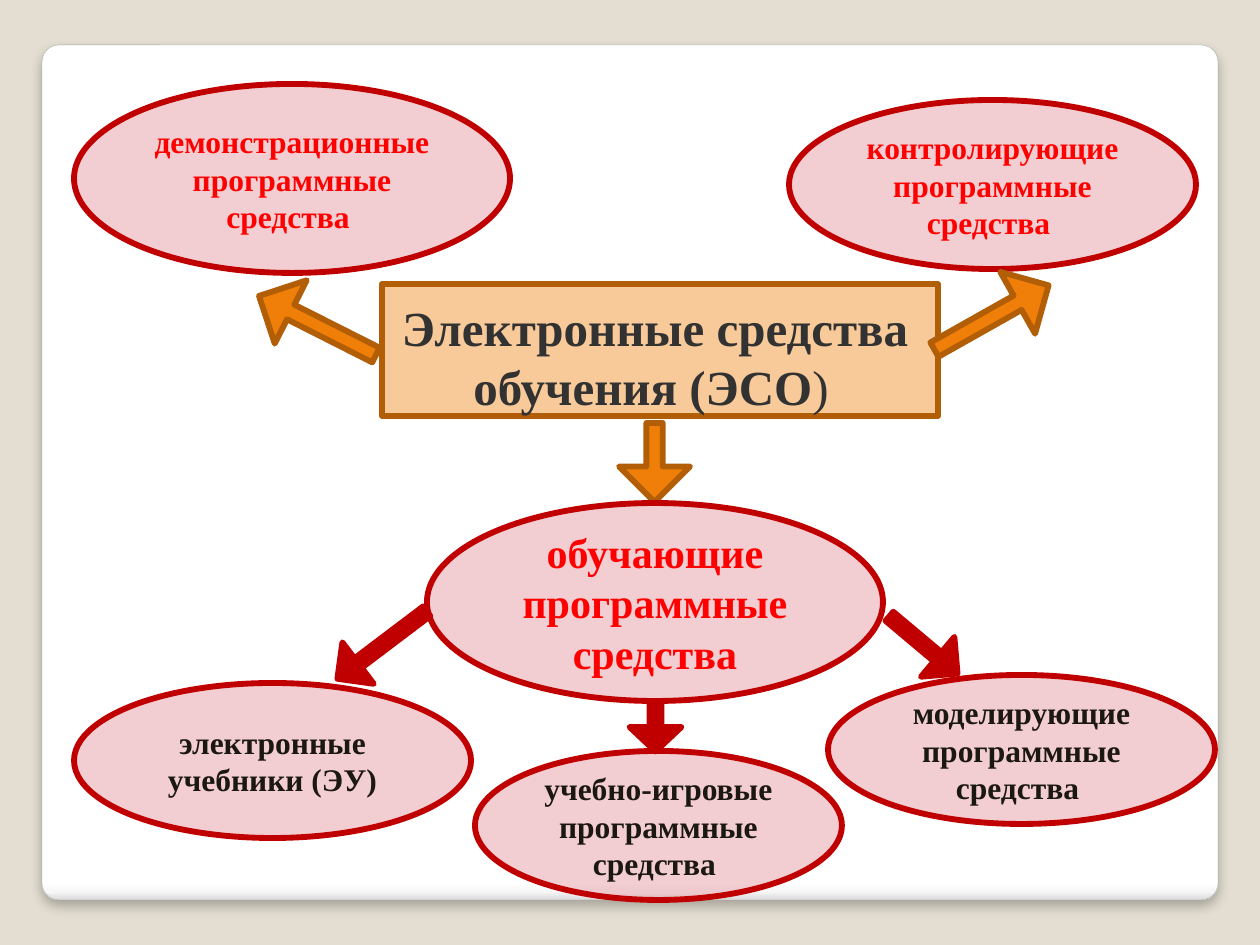
from dataclasses import dataclass

from lxml.etree import SubElement
from pptx import Presentation
from pptx.dml.color import RGBColor
from pptx.enum.shapes import MSO_SHAPE as Shape
from pptx.enum.text import MSO_ANCHOR as Anchor, PP_ALIGN as Align
from pptx.oxml import parse_xml
from pptx.oxml.ns import nsdecls, qn
from pptx.util import Emu, Pt

PX_PER_INCH = 126


@dataclass(frozen=True)
class Theme:
    font: str = "Times New Roman"
    backdrop: str = "E3DED1"
    panel_edge: str = "A4A4A4"
    orange: str = "F07F09"
    orange_edge: str = "B25E07"
    pink: str = "E69CA4"
    red: str = "C00000"
    accent_text: str = "FF0000"
    title_text: str = "323232"
    leaf_text: str = "1B1810"
    title_size: int = 28
    hub_size: int = 24
    body_size: int = 18
    outline: float = 3.35


THEME = Theme()


def px(length):
    return Emu(round(length * 914400 / PX_PER_INCH))


def within(box, left, top, width, height):
    """Shift a part's frame from its region's corner to the slide."""
    return box[0] + left, box[1] + top, width, height


def add_part(slide, preset, frame, fill, edge, opacity=100):
    part = slide.shapes.add_shape(preset, *map(px, frame))
    part.shadow.inherit = False
    part.fill.solid()
    part.fill.fore_color.rgb = RGBColor.from_string(fill)
    part.line.color.rgb = RGBColor.from_string(edge)
    part.line.width = Pt(THEME.outline)
    if opacity < 100:
        color = part.fill._xPr.find(qn("a:solidFill"))[0]
        SubElement(color, qn("a:alpha")).set("val", str(opacity * 1000))
    return part


def style_run(run, size, color, bold=True):
    run.font.name = THEME.font
    run.font.size = Pt(size)
    run.font.bold = bold
    run.font.color.rgb = RGBColor.from_string(color)


def add_ellipse(slide, frame, wording, color, size=THEME.body_size):
    ellipse = add_part(slide, Shape.OVAL, frame, THEME.pink, THEME.red, 50)
    body = ellipse.text_frame
    body.text = wording
    body.word_wrap = True
    body.vertical_anchor = Anchor.MIDDLE
    body.paragraphs[0].alignment = Align.CENTER
    style_run(body.paragraphs[0].runs[0], size, color)


def add_arrow(slide, frame, angle, fill, edge):
    arrow = add_part(slide, Shape.RIGHT_ARROW, frame, fill, edge)
    arrow.adjustments[0] = 0.23
    arrow.adjustments[1] = 0.5
    arrow.rotation = angle


def add_panel(slide, box):
    panel = add_part(slide, Shape.ROUNDED_RECTANGLE, box, "FFFFFF", THEME.panel_edge)
    panel.adjustments[0] = 0.02
    panel.line.width = Pt(0.16)
    properties = panel.fill._xPr
    stops = "".join(
        f'<a:gs pos="{percent * 1000}"><a:srgbClr val="{color}"/></a:gs>'
        for percent, color in [(0, "FFFFFF"), (98, "FFFFFF"), (99, "F7F7F7"), (100, "DADADA")]
    )
    gradient = parse_xml(
        f'<a:gradFill {nsdecls("a")} rotWithShape="1"><a:gsLst>{stops}</a:gsLst>'
        '<a:lin ang="5400000" scaled="0"/></a:gradFill>'
    )
    properties.replace(properties.find(qn("a:solidFill")), gradient)
    shadow = parse_xml(
        f'<a:outerShdw {nsdecls("a")} blurRad="{Pt(6)}" dist="{Pt(4)}" dir="5400000" '
        'algn="t" rotWithShape="0"><a:srgbClr val="000000">'
        '<a:alpha val="25000"/></a:srgbClr></a:outerShdw>'
    )
    properties.find(qn("a:effectLst")).append(shadow)


def add_title(slide, box):
    add_part(slide, Shape.RECTANGLE, box, THEME.orange, THEME.orange_edge, 41)
    frame = within(box, -15, 7, 576, 131)
    body = slide.shapes.add_textbox(*map(px, frame)).text_frame
    body.word_wrap = True
    heading = body.paragraphs[0]
    heading.alignment = Align.CENTER
    for wording, size, bold in [
        ("Электронные средства обучения (ЭСО", THEME.title_size, True),
        (")", THEME.title_size, False),
        (" ", THEME.body_size, False),
    ]:
        run = heading.add_run()
        run.text = wording
        style_run(run, size, THEME.title_text, bold)


def add_overview(slide, box):
    """The title with the two upper kinds of tools and the arrows leaving it."""
    add_title(slide, within(box, 308, 200, 556, 132))
    for frame, wording in [
        ((715, 16, 407, 169), "контролирующие программные средства "),
        ((0, 0, 436, 189), "демонстрационные программные средства "),
    ]:
        add_ellipse(slide, within(box, *frame), wording, THEME.accent_text)
    for frame, angle in [
        ((178, 206, 131, 71), 206.8),
        ((852, 198, 131, 71), 330.6),
        ((541, 343, 79, 71), 90),
    ]:
        add_arrow(slide, within(box, *frame), angle, THEME.orange, THEME.orange_edge)


def add_teaching_tools(slide, box):
    """The teaching hub, its three branches and the arrows to them."""
    for frame, wording in [
        ((0, 181, 397, 155), "электронные учебники (ЭУ)"),
        ((401, 249, 367, 149), "учебно-игровые программные средства "),
        ((754, 173, 387, 149), "моделирующие программные средства "),
    ]:
        add_ellipse(slide, within(box, *frame), wording, THEME.leaf_text)
    add_ellipse(slide, within(box, 353, 1, 456, 198), "обучающие программные средства",
                THEME.accent_text, THEME.hub_size)
    for frame, angle in [
        ((252, 117, 112, 52), 142.9),
        ((805, 117, 89, 52), 40),
        ((557, 199, 49, 52), 90),
    ]:
        add_arrow(slide, within(box, *frame), angle, THEME.red, THEME.red)


def main():
    deck = Presentation()
    deck.slide_width, deck.slide_height = px(1260), px(945)
    slide = deck.slides.add_slide(deck.slide_layouts[6])
    slide.background.fill.solid()
    slide.background.fill.fore_color.rgb = RGBColor.from_string(THEME.backdrop)
    add_panel(slide, (42, 45, 1176, 855))
    add_overview(slide, (74, 84, 1122, 414))
    add_teaching_tools(slide, (74, 502, 1141, 398))
    deck.save("out.pptx")


if __name__ == "__main__":
    main()
